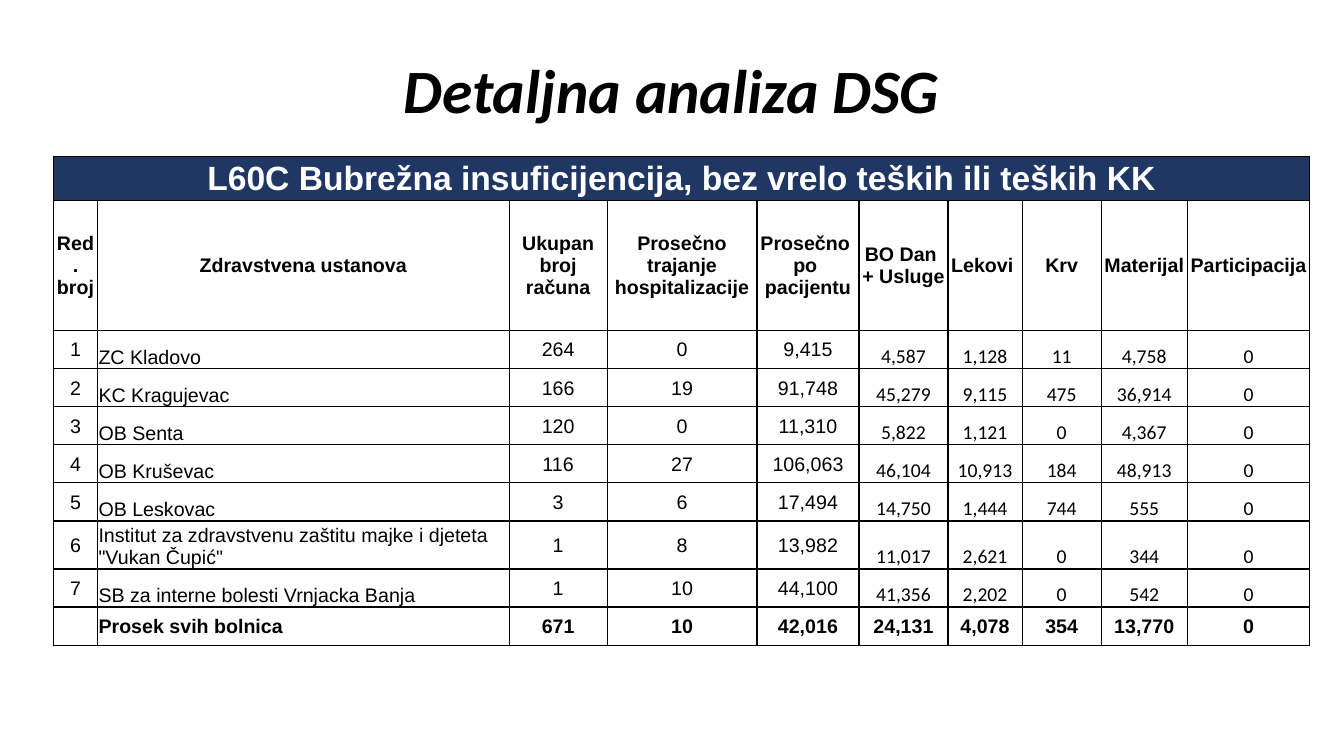
from lxml import etree
from pptx import Presentation
from pptx.dml.color import RGBColor
from pptx.enum.text import MSO_ANCHOR, PP_ALIGN
from pptx.oxml.ns import qn
from pptx.util import Pt

LEFT, CENTER = PP_ALIGN.LEFT, PP_ALIGN.CENTER
MIDDLE, BOTTOM = MSO_ANCHOR.MIDDLE, MSO_ANCHOR.BOTTOM
BLACK = RGBColor(0x00, 0x00, 0x00)
WHITE = RGBColor(0xFF, 0xFF, 0xFF)
NAVY = RGBColor(0x20, 0x37, 0x64)

WIDTHS = [31.5, 294, 70, 107, 73, 63.5, 53, 56.5, 61.5, 87.5]
HEIGHTS = [31.5, 93] + [27.2] * 8
BANNER = "L60C Bubrežna insuficijencija, bez vrelo teških ili teških KK"
HEADS = [
    "Red. broj", "Zdravstvena ustanova", "Ukupan broj računa",
    "Prosečno trajanje hospitalizacije", "Prosečno \npo \npacijentu",
    "BO Dan \n+ Usluge", "Lekovi ", "Krv", "Materijal", "Participacija",
]
CLINICS = [
    ["1", "ZC Kladovo", "264", "0", "9,415", "4,587", "1,128", "11", "4,758", "0"],
    ["2", "KC Kragujevac", "166", "19", "91,748", "45,279", "9,115", "475", "36,914", "0"],
    ["3", "OB Senta", "120", "0", "11,310", "5,822", "1,121", "0", "4,367", "0"],
    ["4", "OB Kruševac", "116", "27", "106,063", "46,104", "10,913", "184", "48,913", "0"],
    ["5", "OB Leskovac", "3", "6", "17,494", "14,750", "1,444", "744", "555", "0"],
    ["6", 'Institut za zdravstvenu zaštitu majke i djeteta "Vukan Čupić"',
     "1", "8", "13,982", "11,017", "2,621", "0", "344", "0"],
    ["7", "SB za interne bolesti Vrnjacka Banja",
     "1", "10", "44,100", "41,356", "2,202", "0", "542", "0"],
]
TOTAL = ["", "Prosek svih bolnica", "671", "10", "42,016",
         "24,131", "4,078", "354", "13,770", "0"]


def write(frame, text, size=14, font="Arial", color=BLACK, bold=False,
          italic=False, align=CENTER, spacing=None):
    for i, line in enumerate(text.split("\n")):
        para = frame.add_paragraph() if i else frame.paragraphs[0]
        para.alignment = align
        if spacing:
            para.line_spacing = spacing
        if line:
            run = para.add_run()
            run.text = line
            run.font.size = Pt(size)
            run.font.name = font
            run.font.bold = bold
            run.font.italic = italic
            run.font.color.rgb = color


class Page:
    edge = BLACK
    weight = 1
    inset = 0.7

    def __init__(self, slide):
        self.slide = slide

    def title(self, text, x, y, w, h):
        box = self.slide.shapes.add_textbox(Pt(x), Pt(y), Pt(w), Pt(h))
        frame = box.text_frame
        frame.word_wrap = True
        frame.vertical_anchor = MIDDLE
        write(frame, text, size=44, font="Calibri", bold=True,
              italic=True, spacing=0.9)

    def grid(self, x, y, widths, heights):
        table = self.slide.shapes.add_table(
            len(heights), len(widths), Pt(x), Pt(y),
            Pt(sum(widths)), Pt(sum(heights))).table
        table.first_row = False
        table.horz_banding = False
        for col, width in zip(table.columns, widths):
            col.width = Pt(width)
        for row, height in zip(table.rows, heights):
            row.height = Pt(height)
        for cell in table.iter_cells():
            self.border(cell)
        return table

    def border(self, cell):
        props = cell._tc.get_or_add_tcPr()
        for side in ("a:lnL", "a:lnR", "a:lnT", "a:lnB"):
            line = etree.SubElement(props, qn(side), w=str(Pt(self.weight)))
            fill = etree.SubElement(line, qn("a:solidFill"))
            etree.SubElement(fill, qn("a:srgbClr"), val=str(self.edge))

    def cell(self, cell, text, fill=WHITE, anchor=MIDDLE, **style):
        cell.fill.solid()
        cell.fill.fore_color.rgb = fill
        cell.vertical_anchor = anchor
        cell.margin_left = cell.margin_right = cell.margin_top = Pt(self.inset)
        cell.margin_bottom = 0
        write(cell.text_frame, text, **style)


def main():
    deck = Presentation()
    deck.slide_width, deck.slide_height = Pt(960), Pt(540)
    page = Page(deck.slides.add_slide(deck.slide_layouts[6]))
    page.title("Detaljna analiza DSG", 66, 28.75, 828, 75.5)

    table = page.grid(38.2, 111.7, WIDTHS, HEIGHTS)
    table.cell(0, 0).merge(table.cell(0, len(WIDTHS) - 1))
    page.cell(table.cell(0, 0), BANNER, fill=NAVY, size=24, color=WHITE, bold=True)
    for c, head in enumerate(HEADS):
        page.cell(table.cell(1, c), head, bold=True)
    for r, clinic in enumerate(CLINICS, 2):
        for c, text in enumerate(clinic):
            page.cell(table.cell(r, c), text,
                      anchor=BOTTOM if c == 1 or c > 4 else MIDDLE,
                      font="Calibri" if c > 4 else "Arial",
                      align=LEFT if c == 1 else CENTER)
    for c, text in enumerate(TOTAL):
        page.cell(table.cell(len(HEIGHTS) - 1, c), text, bold=True,
                  align=LEFT if c == 1 else CENTER)
    deck.save("out.pptx")


if __name__ == "__main__":
    main()
